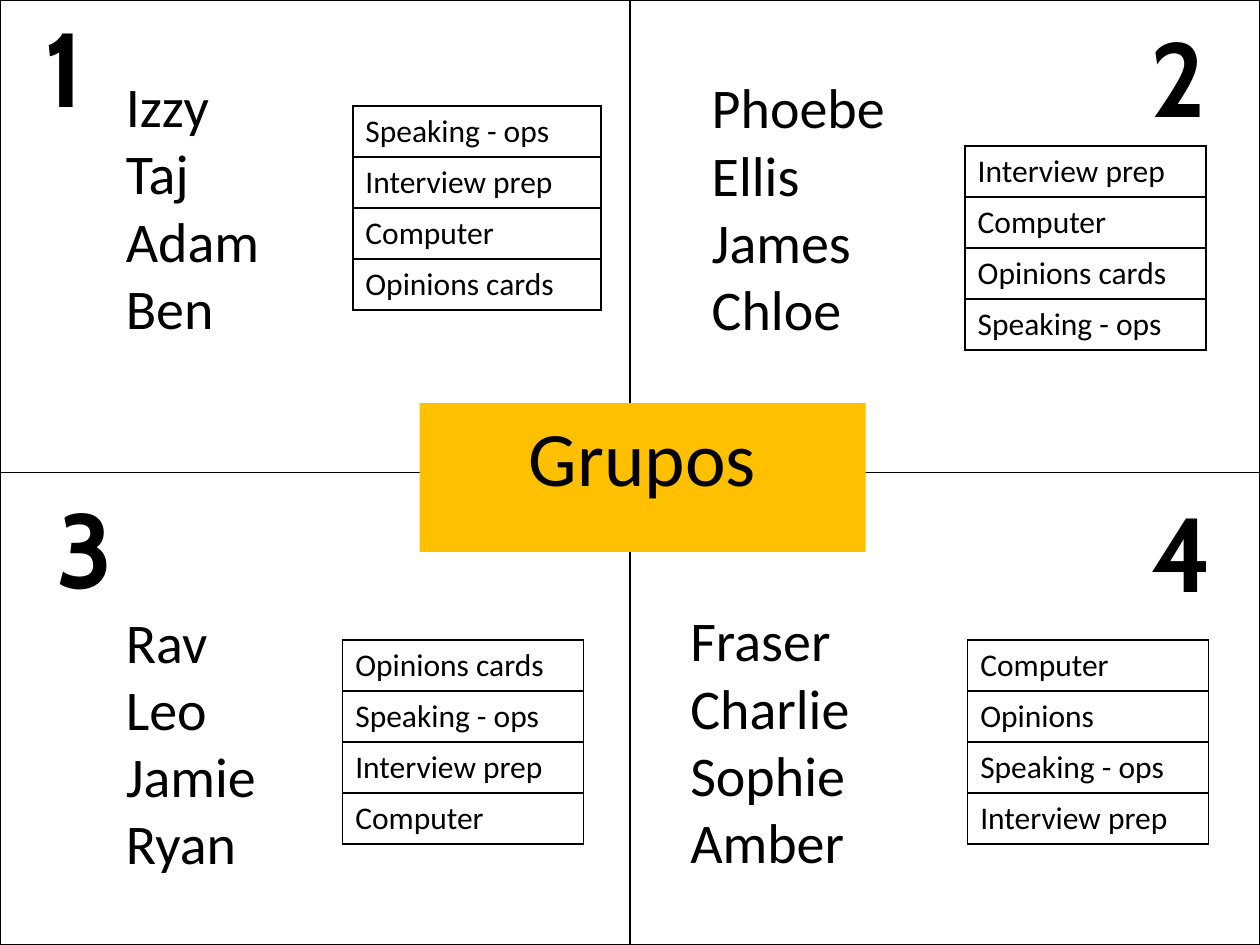
from dataclasses import dataclass

from lxml.etree import SubElement
from pptx import Presentation
from pptx.dml.color import RGBColor
from pptx.enum.text import MSO_ANCHOR, MSO_AUTO_SIZE, PP_ALIGN
from pptx.oxml.ns import qn
from pptx.util import Inches, Pt

BLACK = RGBColor(0x00, 0x00, 0x00)
AMBER = RGBColor(0xFF, 0xC0, 0x00)
WIDTH, HEIGHT = Inches(10), Inches(7.5)
COLUMNS, ROWS = 100, 75
TASK_ROW = 4.05
BORDERS = ("a:lnL", "a:lnR", "a:lnT", "a:lnB")


@dataclass(frozen=True)
class Area:
    column: float
    row: float
    columns: float
    rows: float

    def box(self) -> tuple[int, int, int, int]:
        return (
            round(WIDTH * self.column / COLUMNS),
            round(HEIGHT * self.row / ROWS),
            round(WIDTH * self.columns / COLUMNS),
            round(HEIGHT * self.rows / ROWS),
        )


@dataclass(frozen=True)
class Group:
    number: str
    number_at: tuple[float, float]
    members: tuple[str, ...]
    members_area: Area
    tasks: tuple[str, ...]
    tasks_at: tuple[float, float]
    tasks_columns: float = 19.1


GROUPS = (
    Group("1", (-1.2, -0.3), ("Izzy", "Taj", "Adam", "Ben"), Area(9, 5.2, 30.7, 22.6),
          ("Speaking - ops", "Interview prep", "Computer", "Opinions cards"),
          (28, 8.4), 19.7),
    Group("2", (87.2, 0.5), ("Phoebe", "Ellis", "James", "Chloe"), Area(55.5, 5.3, 29.9, 22.6),
          ("Interview prep", "Computer", "Opinions cards", "Speaking - ops"),
          (76.6, 11.6)),
    Group("3", (0.4, 37.9), ("Rav", "Leo", "Jamie", "Ryan"), Area(9, 47.7, 30.7, 22.6),
          ("Opinions cards", "Speaking - ops", "Interview prep", "Computer"),
          (27.2, 50.8)),
    Group("4", (87.5, 38.2), ("Fraser", "Charlie", "Sophie", "Amber"), Area(53.8, 47.6, 29.9, 22.6),
          ("Computer", "Opinions", "Speaking - ops", "Interview prep"),
          (76.8, 50.8)),
)


def style(paragraph, size: float, font: str = "Calibri", bold: bool = False) -> None:
    paragraph.font.size = Pt(size)
    paragraph.font.name = font
    paragraph.font.bold = bold
    paragraph.font.color.rgb = BLACK


def add_text(slide, area: Area, text: str, size: float, font: str = "Calibri",
             bold: bool = False, align: PP_ALIGN = PP_ALIGN.LEFT) -> None:
    frame = slide.shapes.add_textbox(*area.box()).text_frame
    frame.word_wrap = True
    frame.auto_size = MSO_AUTO_SIZE.SHAPE_TO_FIT_TEXT
    frame.text = text
    frame.paragraphs[0].alignment = align
    style(frame.paragraphs[0], size, font, bold)


def outline(cell) -> None:
    properties = cell._tc.get_or_add_tcPr()
    for position, side in enumerate(BORDERS):
        line = properties.makeelement(qn(side), {"w": str(Pt(1))})
        properties.insert(position, line)
        fill = SubElement(line, qn("a:solidFill"))
        SubElement(fill, qn("a:srgbClr"), val=str(BLACK))


def add_table(slide, area: Area, rows: list[tuple[str, ...]]) -> None:
    table = slide.shapes.add_table(len(rows), len(rows[0]), *area.box()).table
    table.first_row = False
    table.horz_banding = False
    for r, texts in enumerate(rows):
        for c, text in enumerate(texts):
            cell = table.cell(r, c)
            cell.fill.background()
            outline(cell)
            cell.text = text
            style(cell.text_frame.paragraphs[0], 18)


def place_title(slide, area: Area, text: str) -> None:
    title = slide.shapes.title
    title.left, title.top, title.width, title.height = area.box()
    title.fill.solid()
    title.fill.fore_color.rgb = AMBER
    frame = title.text_frame
    frame.text = text
    frame.auto_size = MSO_AUTO_SIZE.NONE
    frame.vertical_anchor = MSO_ANCHOR.TOP
    frame.paragraphs[0].alignment = PP_ALIGN.CENTER
    style(frame.paragraphs[0], 44)
    title.element.getparent().append(title.element)


def add_group(slide, group: Group) -> None:
    add_text(slide, group.members_area, "\v".join(group.members), 32)
    add_text(slide, Area(*group.number_at, 12.6, 11.1), group.number, 60,
             "Cabin", True, PP_ALIGN.CENTER)
    tasks_area = Area(*group.tasks_at, group.tasks_columns, TASK_ROW * len(group.tasks))
    add_table(slide, tasks_area, [(task,) for task in group.tasks])


def main() -> None:
    deck = Presentation()
    deck.slide_width, deck.slide_height = WIDTH, HEIGHT
    slide = deck.slides.add_slide(deck.slide_layouts[5])
    add_table(slide, Area(0, 0, COLUMNS, ROWS), [("", "")] * 2)
    place_title(slide, Area(33.3, 32, 35.4, 11.8), "Grupos")
    for group in GROUPS:
        add_group(slide, group)
    deck.save("out.pptx")


if __name__ == "__main__":
    main()
